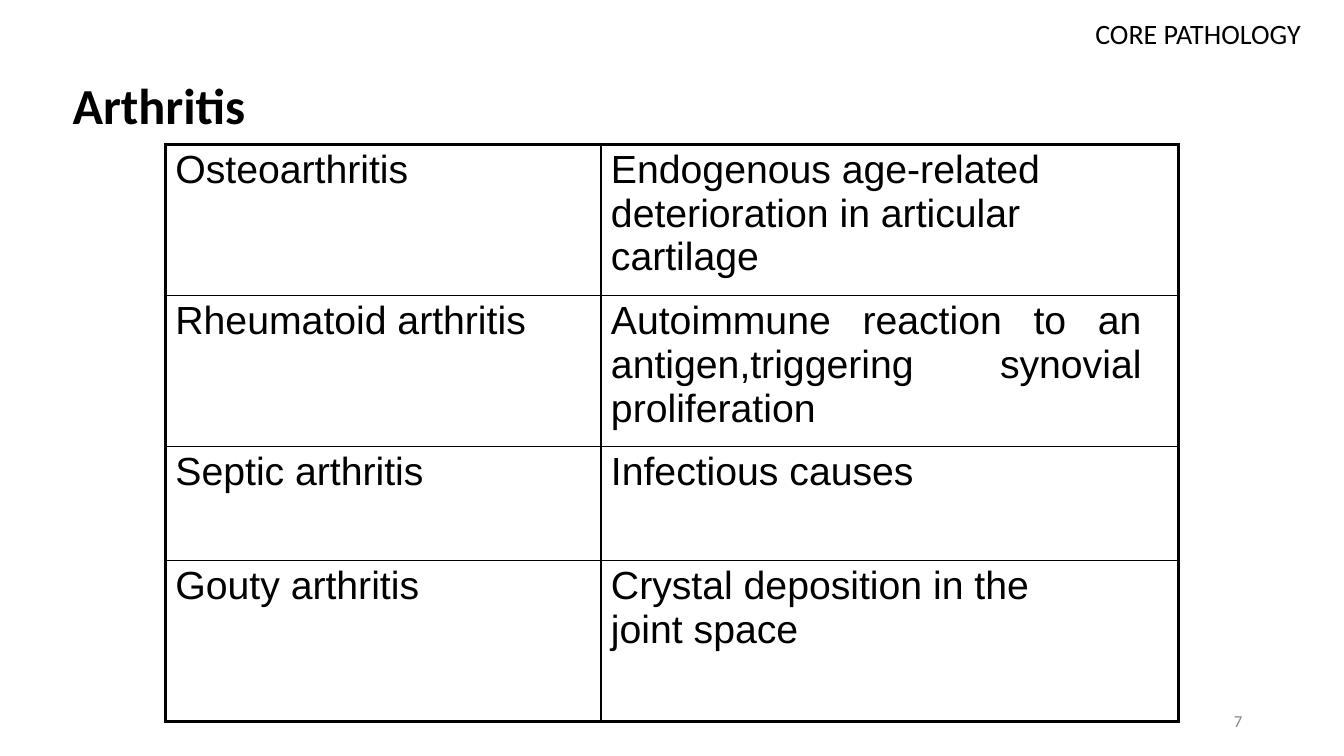
import lxml.etree
import pptx
import pptx.dml.color
import pptx.enum.text
import pptx.oxml.ns
import pptx.util

Inches = pptx.util.Inches
Pt = pptx.util.Pt
ALIGN = pptx.enum.text.PP_ALIGN
ANCHOR = pptx.enum.text.MSO_ANCHOR

COLORS = {"text": "000000", "number": "888888"}
THIN, THICK = 1, 2.25

COLUMNS = [4.32, 5.73]
ROWS = [1.5, 1.5, 1.13, 1.6]
ARTHRITIS = [
    ("Osteoarthritis", "Endogenous age-related deterioration in articular cartilage"),
    ("Rheumatoid arthritis", "Autoimmune reaction to an antigen,triggering synovial proliferation"),
    ("Septic arthritis", "Infectious causes"),
    ("Gouty arthritis", "Crystal deposition in the joint space"),
]
JUSTIFIED = {(1, 1)}
RIGHT_MARGINS = {(0, 1): 0.37, (1, 1): 0.37, (3, 1): 0.7}


class SlideBuilder:
    def __init__(self, prs):
        self.slide = prs.slides.add_slide(prs.slide_layouts[5])

    def add_text(self, tf, text, size, font="Calibri", color="text", bold=False, **paragraph):
        """Fill a text frame with one run; extra keywords format its paragraph."""
        tf.word_wrap = True
        p = tf.paragraphs[0]
        for name, value in paragraph.items():
            setattr(p, name, value)
        r = p.add_run()
        r.text = text
        for name, value in {"size": Pt(size), "name": font, "bold": bold}.items():
            setattr(r.font, name, value)
        r.font.color.rgb = pptx.dml.color.RGBColor.from_string(COLORS[color])
        return p

    def title(self, box, text):
        sp = self.slide.shapes.title
        for name, value in zip(("left", "top", "width", "height"), box):
            setattr(sp, name, Inches(value))
        tf = sp.text_frame
        tf.auto_size = pptx.enum.text.MSO_AUTO_SIZE.NONE
        tf.vertical_anchor = ANCHOR.MIDDLE
        self.add_text(tf, text, 36, bold=True, alignment=ALIGN.LEFT,
                      line_spacing=1.15, space_before=Pt(12), space_after=Pt(12))

    def label(self, box, text, size, color="text", anchor=ANCHOR.TOP, inset=0.05):
        tf = self.slide.shapes.add_textbox(*map(Inches, box)).text_frame
        tf.vertical_anchor = anchor
        tf.margin_top = tf.margin_bottom = Inches(inset)
        self.add_text(tf, text, size, color=color, alignment=ALIGN.RIGHT)

    def borders(self, cell, widths):
        tc_pr = cell._tc.get_or_add_tcPr()
        for i, (side, width) in enumerate(widths.items()):
            ln = lxml.etree.Element(pptx.oxml.ns.qn(f"a:ln{side}"), w=str(Pt(width)))
            fill = lxml.etree.SubElement(ln, pptx.oxml.ns.qn("a:solidFill"))
            lxml.etree.SubElement(fill, pptx.oxml.ns.qn("a:srgbClr"), val=COLORS["text"])
            tc_pr.insert(i, ln)

    def table(self, left, top, columns, rows, texts):
        box = map(Inches, (left, top, sum(columns), sum(rows)))
        table = self.slide.shapes.add_table(len(rows), len(columns), *box).table
        table.first_row = table.horz_banding = False
        for column, width in zip(table.columns, columns):
            column.width = Inches(width)
        for i, height in enumerate(rows):
            table.rows[i].height = Inches(height)
            for j, text in enumerate(texts[i]):
                cell = table.cell(i, j)
                cell.fill.background()
                margins = {"left": 0, "top": 0.04, "bottom": 0,
                           "right": RIGHT_MARGINS.get((i, j), 0)}
                for side, margin in margins.items():
                    setattr(cell, f"margin_{side}", Inches(margin))
                align = ALIGN.JUSTIFY if (i, j) in JUSTIFIED else ALIGN.LEFT
                p = self.add_text(cell.text_frame, text, 28, "Arial", alignment=align)
                p._p.get_or_add_pPr().set("marL", str(Inches(0.1)))
                outer = {"L": j == 0, "R": j == len(columns) - 1,
                         "T": i == 0, "B": i == len(rows) - 1}
                self.borders(cell, {side: THICK if edge else THIN
                                    for side, edge in outer.items()})


def main():
    prs = pptx.Presentation()
    prs.slide_width, prs.slide_height = Inches(13.33), Inches(7.5)
    s = SlideBuilder(prs)
    s.title((0.62, 0.11, 9.29, 1.77), "Arthritis")
    s.label((9.42, 6.95, 3, 0.4), "7", 12, color="number", anchor=ANCHOR.MIDDLE)
    s.label((9.53, 0.06, 3.47, 0.59), "CORE PATHOLOGY", 20, inset=0.1)
    s.table(1.64, 1.43, COLUMNS, ROWS, ARTHRITIS)
    prs.save("out.pptx")


if __name__ == "__main__":
    main()
